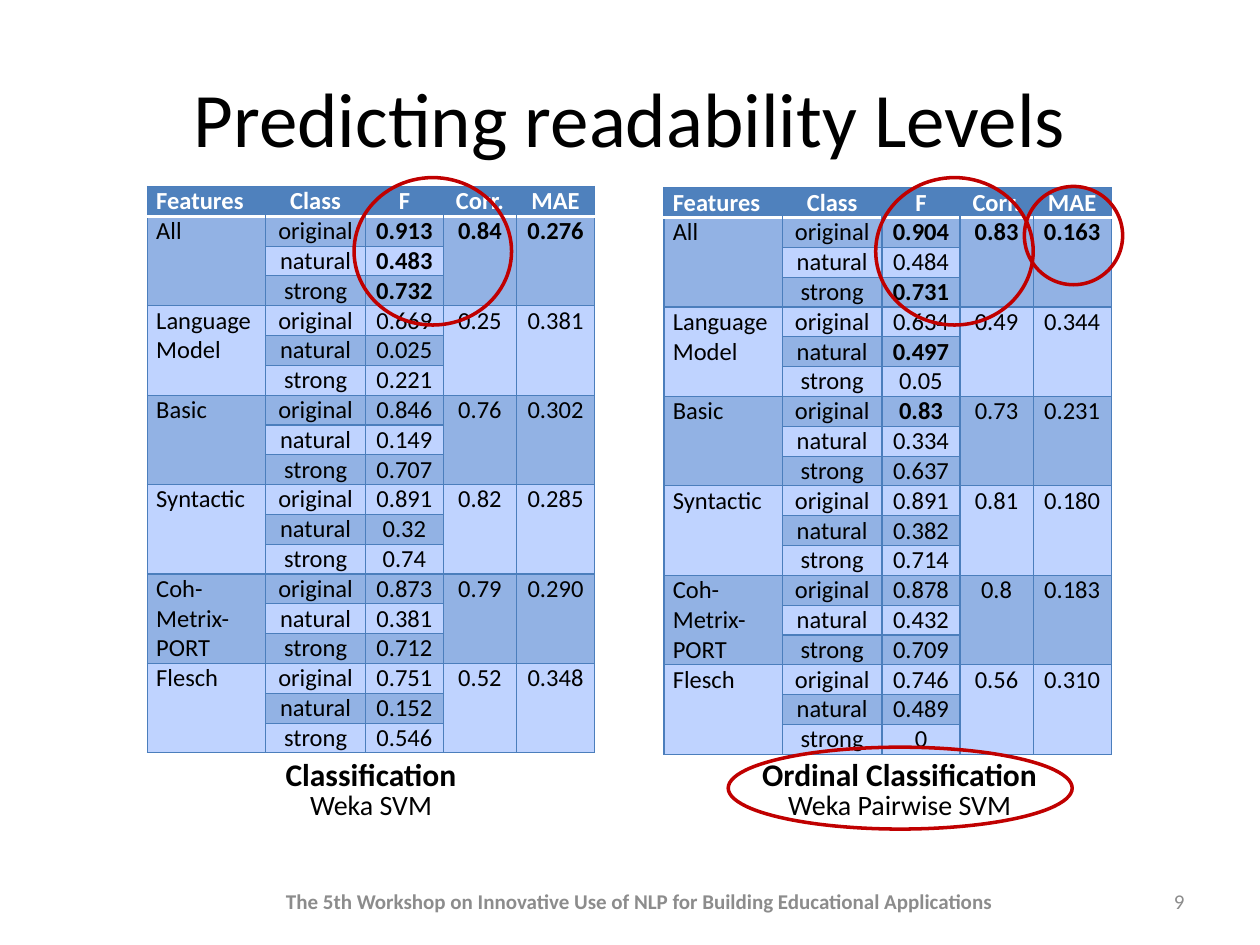
from lxml import etree
from pptx import Presentation
from pptx.dml.color import RGBColor
from pptx.enum.shapes import MSO_SHAPE
from pptx.enum.text import MSO_ANCHOR, PP_ALIGN
from pptx.oxml.ns import qn
from pptx.util import Inches, Pt

CENTER, RIGHT, JUSTIFY = PP_ALIGN.CENTER, PP_ALIGN.RIGHT, PP_ALIGN.JUSTIFY
MIDDLE, TOP = MSO_ANCHOR.MIDDLE, MSO_ANCHOR.TOP
OVAL = MSO_SHAPE.OVAL

# Content
TITLE = "Predicting readability Levels"
FOOTER = "The 5th Workshop on Innovative Use of NLP for Building Educational Applications"
PAGE_NUMBER = "9"
HEADERS = ["Features", "Class", "F", "Corr.", "MAE"]
CLASSES = ["original", "natural", "strong"]
FEATURES = ["All", "Language Model", "Basic", "Syntactic", "Coh-Metrix-PORT", "Flesch"]

# Each result: F for the three classes, correlation, mean absolute error
RESULTS = [
    {
        "position": (1.17, 1.48),
        "scores": [
            (["0.913", "0.483", "0.732"], "0.84", "0.276"),
            (["0.669", "0.025", "0.221"], "0.25", "0.381"),
            (["0.846", "0.149", "0.707"], "0.76", "0.302"),
            (["0.891", "0.32", "0.74"], "0.82", "0.285"),
            (["0.873", "0.381", "0.712"], "0.79", "0.290"),
            (["0.751", "0.152", "0.546"], "0.52", "0.348"),
        ],
        "best": {"0.913", "0.483", "0.732", "0.84", "0.276"},
        "caption": ("Classification", "Weka SVM"),
        "caption_box": (2.16, 6.02, 1.57, 0.55),
    },
    {
        "position": (5.27, 1.49),
        "scores": [
            (["0.904", "0.484", "0.731"], "0.83", "0.163"),
            (["0.634", "0.497", "0.05"], "0.49", "0.344"),
            (["0.83", "0.334", "0.637"], "0.73", "0.231"),
            (["0.891", "0.382", "0.714"], "0.81", "0.180"),
            (["0.878", "0.432", "0.709"], "0.8", "0.183"),
            (["0.746", "0.489", "0"], "0.56", "0.310"),
        ],
        "best": {"0.904", "0.731", "0.497", "0.83", "0.163"},
        "caption": ("Ordinal Classification", "Weka Pairwise SVM"),
        "caption_box": (5.94, 6.02, 2.4, 0.55),
    },
]
HIGHLIGHTS = [
    (2.81, 1.41, 1.25, 1.17),
    (6.95, 1.41, 1.25, 1.17),
    (8.13, 1.48, 0.78, 0.78),
    (5.78, 5.93, 2.73, 0.65),
]

# Style
FONT = "Calibri"
BLACK, WHITE, GRAY, RED = "000000", "FFFFFF", "8C8C8C", "C00000"
HEADER_FILL, DARK_BAND, LIGHT_BAND, GRID = "4F81BD", "92B2E4", "BFD3FF", "4B7EBC"
COLUMN_WIDTHS = [0.94, 0.79, 0.62, 0.58, 0.62]
TABLE_HEIGHT = 4.5
GROUP = len(CLASSES)
ROW_COUNT = 1 + GROUP * len(FEATURES)


def color(value):
    return RGBColor.from_string(value)


def write(paragraph, text, size=14, fill=BLACK, bold=False, align=CENTER, spacing=None):
    paragraph.alignment = align
    if spacing:
        paragraph.line_spacing = Pt(spacing)
    run = paragraph.add_run()
    run.text = text
    run.font.name = FONT
    run.font.size = Pt(size)
    run.font.bold = bold
    run.font.color.rgb = color(fill)


def add_text_box(slide, box, anchor=TOP, wrap=True):
    frame = slide.shapes.add_textbox(*map(Inches, box)).text_frame
    frame.word_wrap = wrap
    frame.vertical_anchor = anchor
    return frame


def set_borders(cell, **sides):
    """Each side L, R, T, B is a (colour, points) pair, or None for no line."""
    properties = cell._tc.get_or_add_tcPr()
    for index, side in enumerate("LRTB"):
        border = sides[side]
        line = etree.Element(qn(f"a:ln{side}"))
        if border:
            line.set("w", str(Pt(border[1])))
            solid = etree.SubElement(line, qn("a:solidFill"))
            etree.SubElement(solid, qn("a:srgbClr"), val=border[0])
        else:
            etree.SubElement(line, qn("a:noFill"))
        properties.insert(index, line)


def format_cell(cell, row, column):
    cell.margin_left = cell.margin_right = Inches(0.07)
    cell.margin_top = cell.margin_bottom = 0
    cell.fill.solid()
    band = DARK_BAND if row % 2 else LIGHT_BAND
    cell.fill.fore_color.rgb = color(band if row else HEADER_FILL)
    grid, rule = (GRID, 0.75), (WHITE, 2)
    last = len(HEADERS) - 1
    set_borders(
        cell,
        L=grid if row or column == 0 else None,
        R=grid if row or column == last else None,
        T=rule if row == 1 else grid,
        B=grid if row else rule,
    )


def add_results_table(slide, result):
    left, top = result["position"]
    table = slide.shapes.add_table(
        ROW_COUNT, len(HEADERS), Inches(left), Inches(top),
        Inches(sum(COLUMN_WIDTHS)), Inches(TABLE_HEIGHT)).table
    table.horz_banding = False
    for column, width in zip(table.columns, COLUMN_WIDTHS):
        column.width = Inches(width)
    for row in table.rows:
        row.height = Inches(TABLE_HEIGHT / ROW_COUNT)
    for row in range(ROW_COUNT):
        for column in range(len(HEADERS)):
            format_cell(table.cell(row, column), row, column)

    def fill_cell(row, column, text, **style):
        align = CENTER if column else JUSTIFY
        write(table.cell(row, column).text_frame.paragraphs[0], text, align=align, **style)

    for column, header in enumerate(HEADERS):
        fill_cell(0, column, header, fill=WHITE, bold=True)

    best = result["best"]
    for index, (feature, scores) in enumerate(zip(FEATURES, result["scores"])):
        first = 1 + index * GROUP
        f_scores, correlation, error = scores
        for column, text in ((0, feature), (3, correlation), (4, error)):
            table.cell(first, column).merge(table.cell(first + GROUP - 1, column))
            # Only the first group has bold merged scores
            fill_cell(first, column, text, bold=index == 0 and text in best)
        for row, (name, score) in enumerate(zip(CLASSES, f_scores), first):
            fill_cell(row, 1, name)
            fill_cell(row, 2, score, bold=score in best)


def add_caption(slide, result):
    heading, method = result["caption"]
    frame = add_text_box(slide, result["caption_box"], wrap=False)
    write(frame.paragraphs[0], heading, size=18, bold=True, spacing=16)
    write(frame.add_paragraph(), method, size=16, spacing=16)


def add_highlight(slide, box):
    ellipse = slide.shapes.add_shape(OVAL, *map(Inches, box))
    ellipse.shadow.inherit = False
    ellipse.fill.background()
    ellipse.line.color.rgb = color(RED)
    ellipse.line.width = Pt(2)


def main():
    presentation = Presentation()
    presentation.slide_width, presentation.slide_height = Inches(10), Inches(7.5)
    slide = presentation.slides.add_slide(presentation.slide_layouts[5])

    # Title
    title = slide.shapes.title
    title.left, title.top, title.width, title.height = map(Inches, (0.5, 0.3, 9, 1.25))
    title.text_frame.vertical_anchor = MIDDLE
    write(title.text_frame.paragraphs[0], TITLE, size=44)

    # Footer and page number
    footer = add_text_box(slide, (2.03, 6.95, 6.09, 0.4), anchor=MIDDLE)
    write(footer.paragraphs[0], FOOTER, size=12, fill=GRAY, bold=True)
    number = add_text_box(slide, (7.17, 6.95, 2.33, 0.4), anchor=MIDDLE)
    write(number.paragraphs[0], PAGE_NUMBER, size=12, fill=GRAY, align=RIGHT)

    # Tables, captions and highlights
    for result in RESULTS:
        add_results_table(slide, result)
    for result in RESULTS:
        add_caption(slide, result)
    for box in HIGHLIGHTS:
        add_highlight(slide, box)

    presentation.save("out.pptx")


if __name__ == "__main__":
    main()
